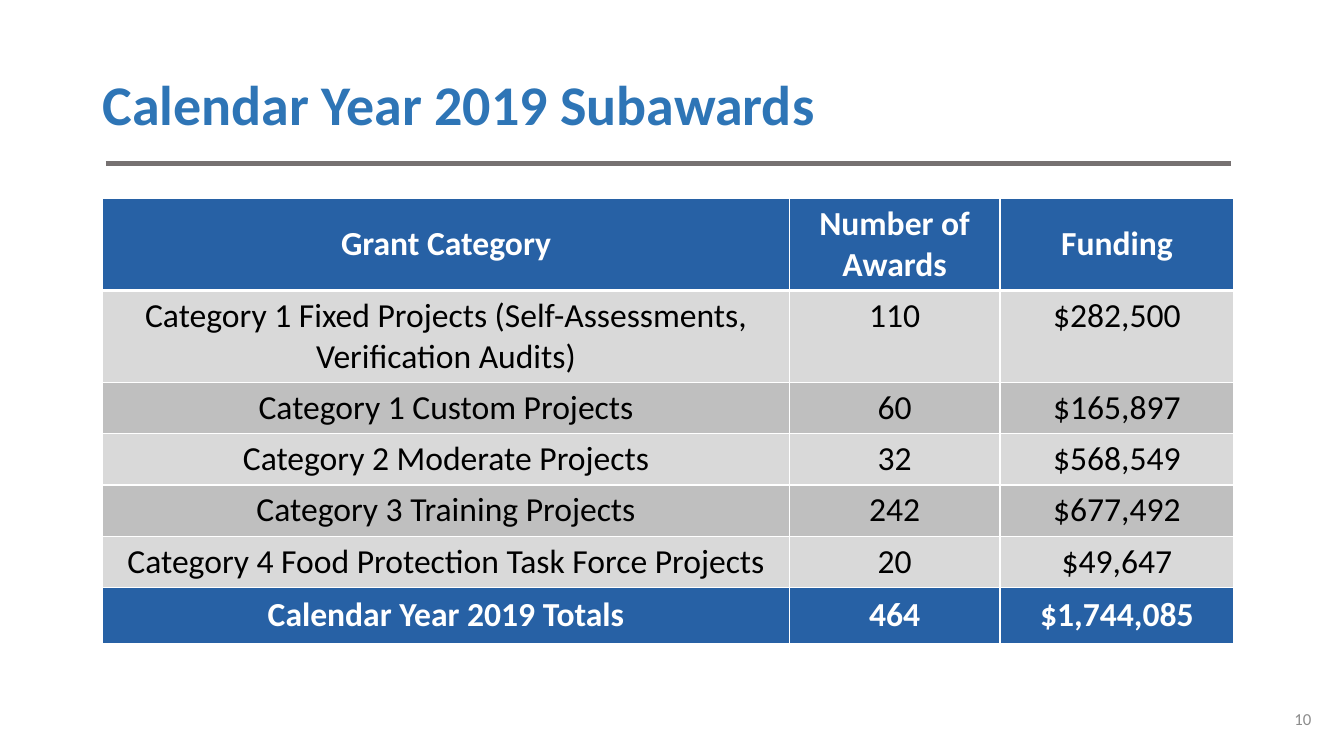
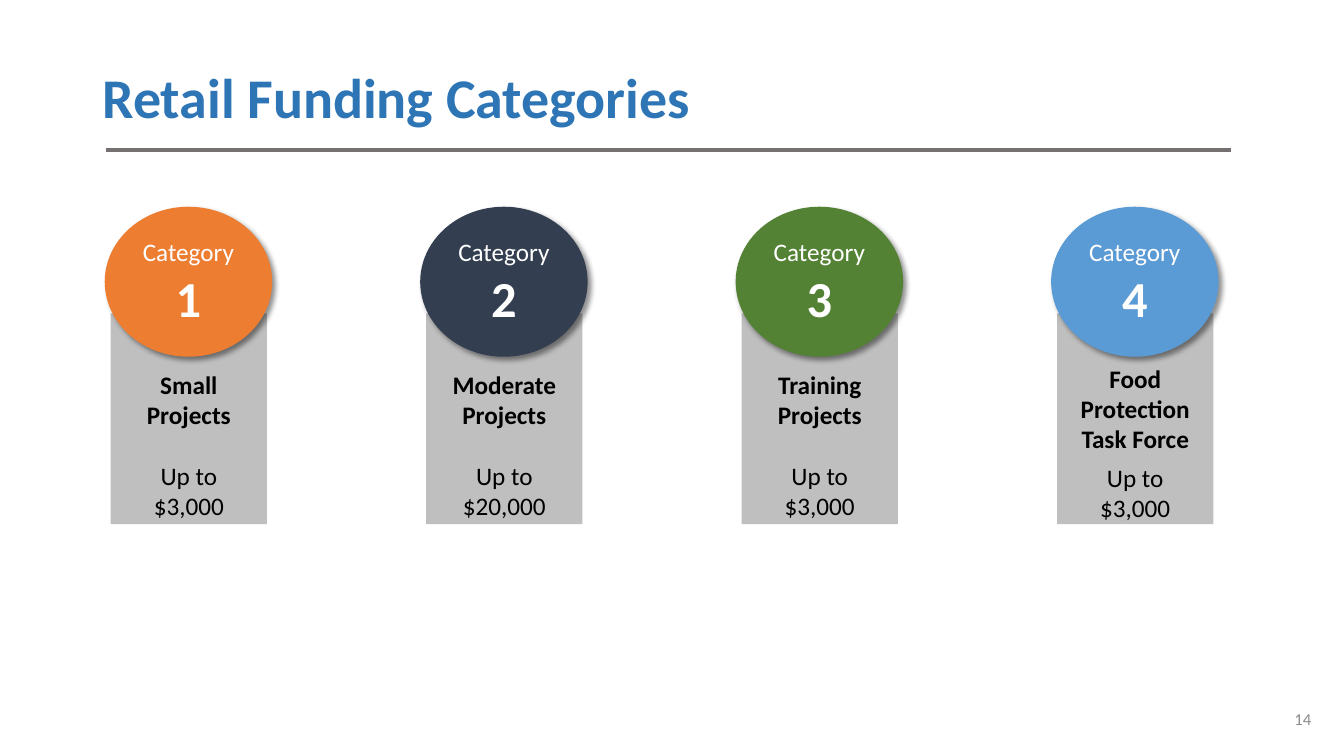
from pptx import Presentation
from pptx.dml.color import RGBColor
from pptx.enum.shapes import MSO_CONNECTOR as Line, MSO_SHAPE as Shape
from pptx.enum.text import MSO_ANCHOR as Anchor, PP_ALIGN as Align
from pptx.oxml import parse_xml
from pptx.oxml.ns import nsdecls, qn
from pptx.util import Cm, Pt


def rgb(value):
    return RGBColor.from_string(value)


def assign(target, values):
    for name, value in values.items():
        setattr(target, name, value)


class Deck:
    FONT = "Calibri"
    WHITE, BLACK = "FFFFFF", "000000"
    TITLE, RULE, NUMBER = "2E75B6", "767171", "8C8C8C"
    HEADER, LIGHT, GREY = "2761A5", "D9D9D9", "BFBFBF"

    def __init__(self):
        self.prs = Presentation()
        assign(self.prs, dict(slide_width=Cm(33.87), slide_height=Cm(19.05)))
        self.s = None

    def fill_text(self, tf, paragraphs, color, align=Align.CENTER, **frame):
        assign(tf, dict(word_wrap=True, vertical_anchor=Anchor.MIDDLE) | frame)
        for i, (text, size, bold, spacing) in enumerate(paragraphs):
            p = tf.add_paragraph() if i else tf.paragraphs[0]
            assign(p, dict(alignment=align) | spacing)
            r = p.add_run()
            r.text = text
            assign(r.font, dict(name=self.FONT, size=Pt(size), bold=bold))
            r.font.color.rgb = rgb(color)

    def slide(self, title, number, title_top, rule_top):
        self.s = self.prs.slides.add_slide(self.prs.slide_layouts[5])
        sp = self.s.shapes.title
        assign(sp, dict(left=Cm(2.33), top=Cm(title_top), width=Cm(29.21), height=Cm(3.68)))
        self.fill_text(sp.text_frame, [(title, 40, True, dict(line_spacing=0.9))],
                       self.TITLE, Align.LEFT)
        self.rule(rule_top)
        self.text((25.68, 17.6, 7.62, 1.02), [(number, 12, False, {})],
                  self.NUMBER, align=Align.RIGHT)

    def rule(self, top):
        sp = self.s.shapes.add_connector(Line.STRAIGHT, Cm(2.67), Cm(top), Cm(31.01), Cm(top))
        sp.line.color.rgb = rgb(self.RULE)
        sp.line.width = Pt(3.5)
        sp._element.spPr.append(parse_xml(f"<a:effectLst {nsdecls('a')}/>"))

    def text(self, box, paragraphs, color, **frame):
        sp = self.s.shapes.add_textbox(*map(Cm, box))
        self.fill_text(sp.text_frame, paragraphs, color, **frame)
        return sp

    def shape(self, kind, box, fill):
        sp = self.s.shapes.add_shape(kind, *map(Cm, box))
        sp.shadow.inherit = False
        sp.fill.solid()
        sp.fill.fore_color.rgb = rgb(fill)
        sp.line.fill.background()
        return sp

    def badge(self, box, fill, number):
        sp = self.shape(Shape.OVAL, box, fill)
        sp._element.spPr.find(qn("a:effectLst")).append(parse_xml(
            f'<a:outerShdw {nsdecls("a")} blurRad="{Pt(4)}" dist="{Pt(3)}" dir="2700000" '
            f'algn="tl" rotWithShape="0"><a:srgbClr val="{self.BLACK}">'
            '<a:alpha val="43000"/></a:srgbClr></a:outerShdw>'))
        self.fill_text(sp.text_frame, [("Category", 18, False, {}), (number, 36, True, {})],
                       self.WHITE, margin_left=0, margin_right=0)

    def card(self, box, text_top, name, amount, gap):
        left, _, width, _ = box
        sp = self.shape(Shape.RECTANGLE, box, self.GREY)
        label = self.text((left, text_top, width, 4.11),
                          [(name, 18, True, {}),
                           ("Up to", 18, False, dict(space_before=Pt(gap))),
                           (amount, 18, False, {})],
                          self.BLACK, vertical_anchor=Anchor.TOP)
        self.s.shapes.add_group_shape([sp, label])

    def border(self, cell, **widths):
        tcPr = cell._tc.get_or_add_tcPr()
        for side in "LRTB":
            tcPr.append(parse_xml(
                f'<a:ln{side} {nsdecls("a")} w="{Pt(widths.get(side, 1))}"><a:solidFill>'
                f'<a:srgbClr val="{self.WHITE}"/></a:solidFill></a:ln{side}>'))

    def table(self, left, top, widths, heights, rows):
        last = len(rows) - 1
        table = self.s.shapes.add_table(len(rows), len(widths), Cm(left), Cm(top),
                                        Cm(sum(widths)), Cm(sum(heights))).table
        for column, width in zip(table.columns, widths):
            column.width = Cm(width)
        for i, (row, height, values) in enumerate(zip(table.rows, heights, rows)):
            row.height = Cm(height)
            strong = i in (0, last)
            fill = self.HEADER if strong else self.LIGHT if i % 2 else self.GREY
            edges = {0: dict(B=3), 1: dict(T=3)}.get(i, {})
            for cell, value in zip(row.cells, values):
                self.border(cell, **edges)
                cell.fill.solid()
                cell.fill.fore_color.rgb = rgb(fill)
                cell.vertical_anchor = Anchor.MIDDLE if strong else Anchor.TOP
                self.fill_text(cell.text_frame, [(value, 24, strong, {})],
                               self.WHITE if strong else self.BLACK,
                               vertical_anchor=None, word_wrap=None)


def subawards(deck):
    deck.slide("Calendar Year 2019 Subawards", "10", 0.86, 4.11)
    rows = [
        ("Grant Category", "Number of Awards", "Funding"),
        ("Category 1 Fixed Projects (Self-Assessments, Verification Audits)", "110", "$282,500"),
        ("Category 1 Custom Projects", "60", "$165,897"),
        ("Category 2 Moderate Projects", "32", "$568,549"),
        ("Category 3 Training Projects", "242", "$677,492"),
        ("Category 4 Food Protection Task Force Projects", "20", "$49,647"),
        ("Calendar Year 2019 Totals", "464", "$1,744,085"),
    ]
    heights = [2.32] * 2 + [1.29] * 4 + [1.42]
    deck.table(2.59, 5, [17.3, 5.31, 5.9], heights, rows)


def categories(deck):
    deck.slide("Retail Funding Categories", "14", 0.69, 3.78)
    items = [
        ("Small Projects", "$3,000", "ED7D31", 9.17, 22),
        ("Moderate Projects", "$20,000", "333F50", 9.17, 22),
        ("Training Projects", "$3,000", "548235", 9.17, 22),
        ("Food Protection Task Force", "$3,000", "5B9BD5", 9.02, 6),
    ]
    for i, (name, amount, color, text_top, gap) in enumerate(items):
        left = 2.79 + i * 7.95
        deck.card((left, 7.9, 3.94, 5.31), text_top, name, amount, gap)
        deck.badge((left - 0.15, 5.21, 4.22, 3.78), color, str(i + 1))


def main():
    deck = Deck()
    subawards(deck)
    categories(deck)
    deck.prs.save("out.pptx")


if __name__ == "__main__":
    main()
